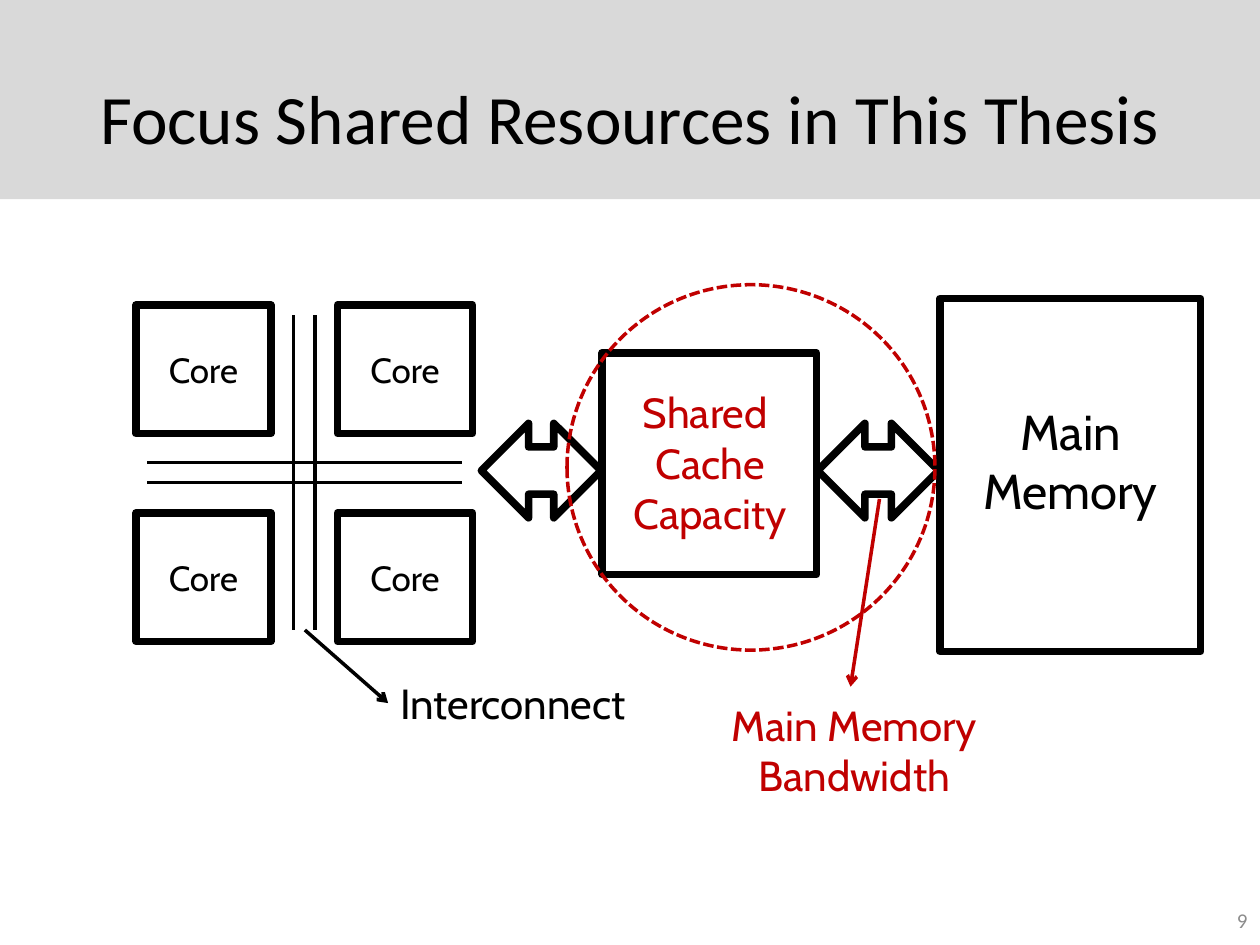
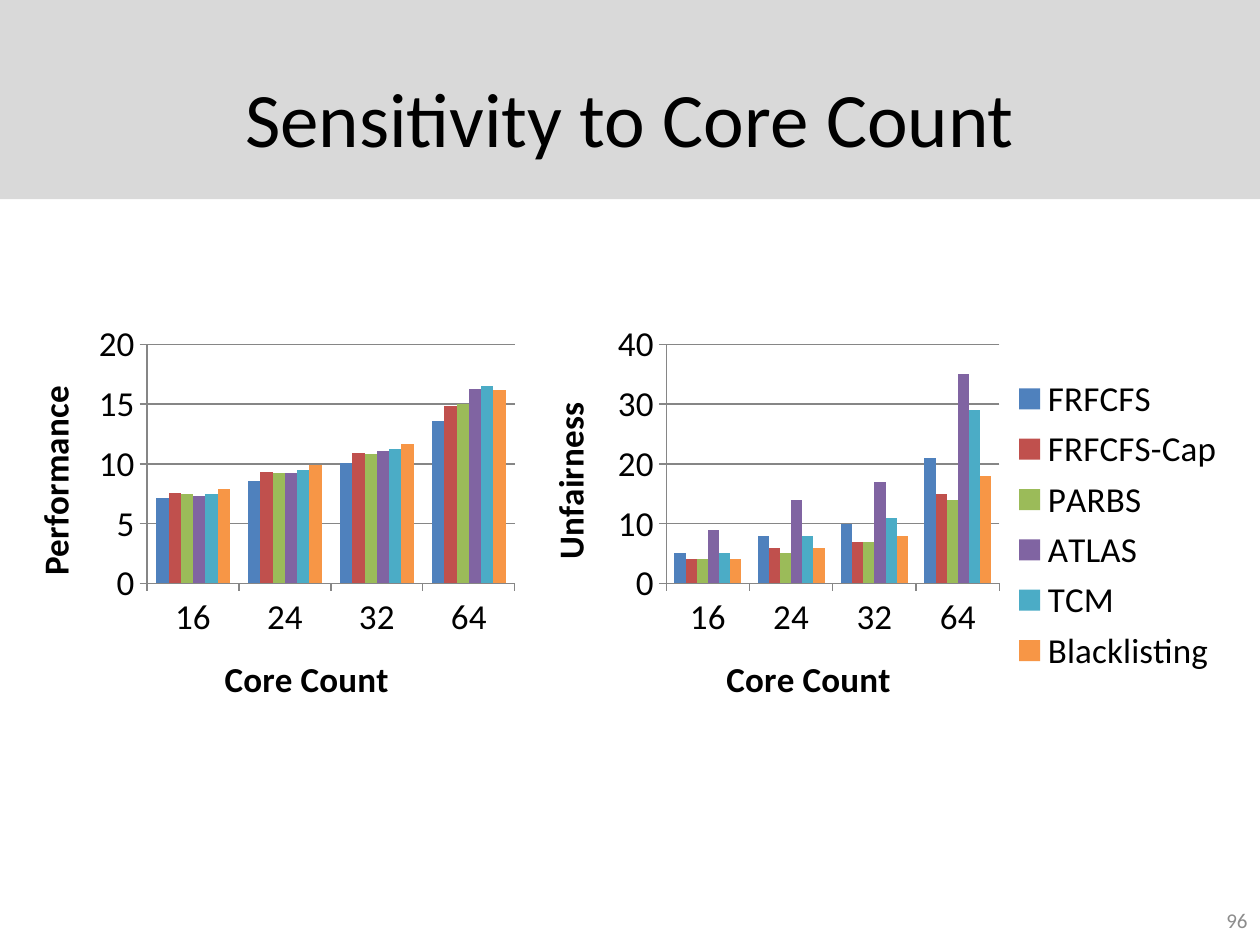
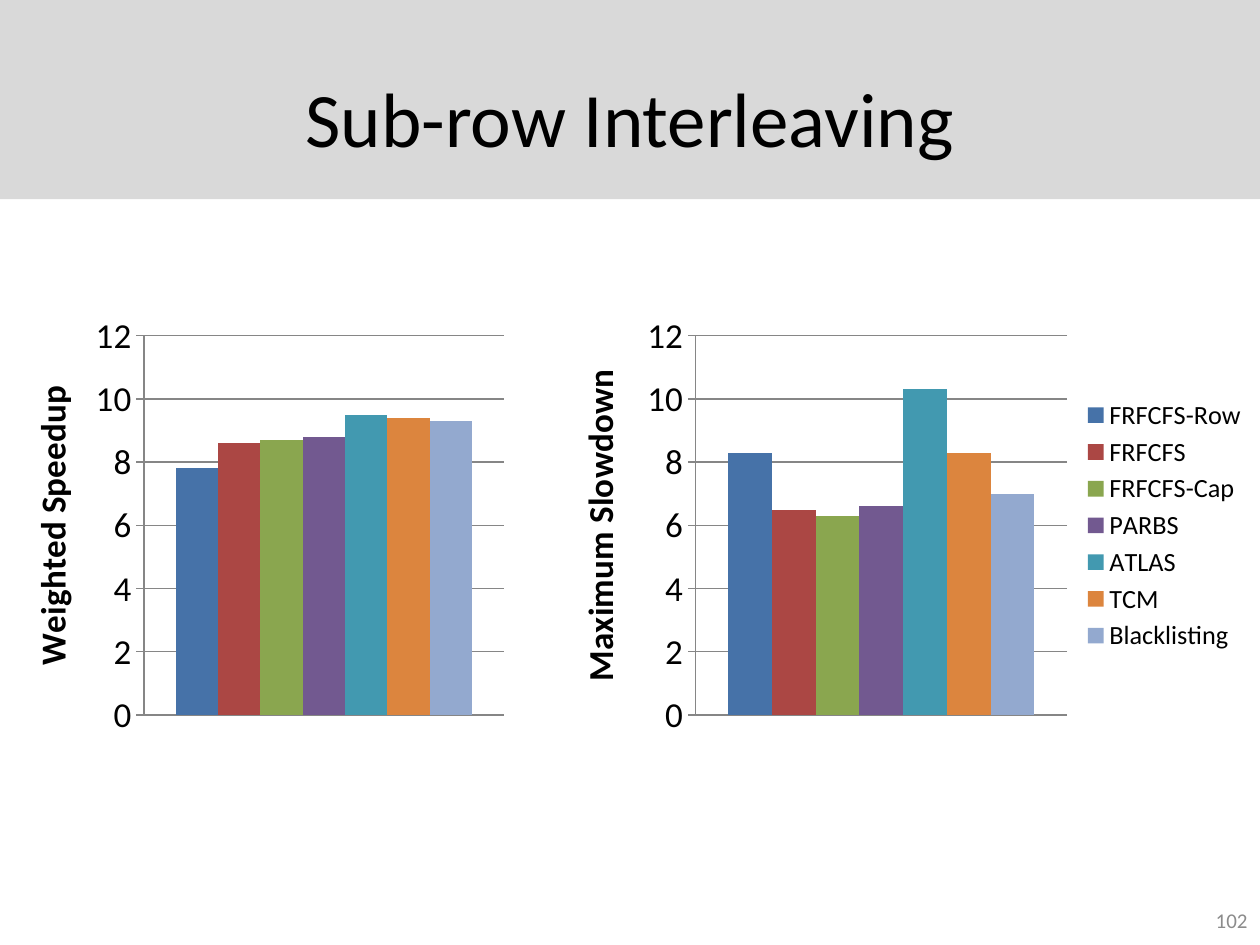
from lxml.etree import SubElement
from pptx import Presentation
from pptx.chart.data import CategoryChartData
from pptx.dml.color import RGBColor
from pptx.enum.chart import XL_CHART_TYPE as ChartType
from pptx.enum.chart import XL_LEGEND_POSITION as LegendPosition
from pptx.enum.chart import XL_TICK_MARK as TickMark
from pptx.enum.dml import MSO_LINE_DASH_STYLE as Dash
from pptx.enum.shapes import MSO_CONNECTOR as Connector
from pptx.enum.shapes import MSO_SHAPE as Shape
from pptx.enum.text import MSO_ANCHOR as Anchor
from pptx.enum.text import PP_ALIGN as Align
from pptx.oxml import parse_xml
from pptx.oxml.ns import nsdecls, qn
from pptx.util import Inches, Pt

BLACK, RED, BAND, NUMBER_GRAY, AXIS_GRAY = "000000", "C00000", "D9D9D9", "8C8C8C", "868686"
BODY_FONT, DIAGRAM_FONT = "Calibri", "Cabin"
THICK, THIN = 4.32, 2
SCHEDULER_COLORS = ["4F81BD", "C0504D", "9BBB59", "8064A2", "4BACC6", "F79646"]
INTERLEAVING_COLORS = ["4672A8", "AB4744", "8AA64F", "725990", "4299B0", "DC853E", "93A9CF"]
SCHEDULERS = ["FRFCFS", "FRFCFS-Cap", "PARBS", "ATLAS", "TCM", "Blacklisting"]
ROW_SCHEDULERS = ["FRFCFS-Row"] + SCHEDULERS
CORE_COUNTS = ["16", "24", "32", "64"]


def color(value):
    return RGBColor.from_string(value)


def style_font(font, size, hex_color=BLACK, name=BODY_FONT, bold=False):
    formats = {"size": Pt(size), "name": name, "bold": bold}
    for key, value in formats.items():
        setattr(font, key, value)
    font.color.rgb = color(hex_color)


def style_line(line, hex_color, width):
    line.color.rgb = color(hex_color)
    line.width = Pt(width)


def add_text(slide, place, text, size, hex_color=BLACK, name=BODY_FONT,
             align=Align.CENTER, anchor=Anchor.TOP):
    frame = slide.shapes.add_textbox(*map(Inches, place)).text_frame
    frame.word_wrap = True
    frame.vertical_anchor = anchor
    for index, line_text in enumerate(text.split("\n")):
        paragraph = frame.add_paragraph() if index else frame.paragraphs[0]
        paragraph.alignment = align
        run = paragraph.add_run()
        run.text = line_text
        style_font(run.font, size, hex_color, name)


def add_label(slide, place, text, size, hex_color=BLACK):
    add_text(slide, place, text, size, hex_color, DIAGRAM_FONT)


def add_outline(slide, kind, place, hex_color=BLACK, width=THICK):
    shape = slide.shapes.add_shape(kind, *map(Inches, place))
    shape.shadow.inherit = False
    shape.fill.background()
    style_line(shape.line, hex_color, width)
    SubElement(shape.line._get_or_add_ln(), qn("a:round"))
    return shape


def add_line(slide, start, end, hex_color=BLACK, arrow=False):
    connector = slide.shapes.add_connector(Connector.STRAIGHT, *map(Inches, start + end))
    style_line(connector.line, hex_color, THIN)
    if arrow:
        SubElement(connector.line._get_or_add_ln(), qn("a:tailEnd"), type="arrow")
    SubElement(connector._element.spPr, qn("a:effectLst"))


def add_slide(presentation, title, number, title_size=44):
    slide = presentation.slides.add_slide(presentation.slide_layouts[6])
    band = slide.shapes.add_shape(Shape.RECTANGLE, 0, 0, Inches(10), Inches(1.58))
    band.shadow.inherit = False
    band.fill.solid()
    band.fill.fore_color.rgb = color(BAND)
    band.line.fill.background()
    add_text(slide, (0.5, 0.3, 9, 1.25), title, title_size, anchor=Anchor.MIDDLE)
    add_text(slide, (7.67, 7.1, 2.33, 0.4), number, 12, NUMBER_GRAY,
             align=Align.RIGHT, anchor=Anchor.MIDDLE)
    return slide


def set_axis_title(axis, text):
    frame = axis.axis_title.text_frame
    frame.text = text
    style_font(frame.paragraphs[0].runs[0].font, 20, bold=True)
    return frame


def set_plot_layout(chart, layout):
    x, y, width, height = layout
    plot_area = chart._chartSpace.chart.plotArea
    for old_layout in plot_area.findall(qn("c:layout")):
        plot_area.remove(old_layout)
    plot_area.insert(0, parse_xml(
        f'<c:layout {nsdecls("c")}><c:manualLayout><c:layoutTarget val="inner"/>'
        f'<c:xMode val="edge"/><c:yMode val="edge"/><c:x val="{x}"/><c:y val="{y}"/>'
        f'<c:w val="{width}"/><c:h val="{height}"/></c:manualLayout></c:layout>'))


def add_column_chart(slide, place, layout, categories, series, colors, value_title,
                     maximum, step, category_title=None, legend_size=None):
    data = CategoryChartData()
    data.categories = categories
    for name, values in series.items():
        data.add_series(name, values)
    chart = slide.shapes.add_chart(ChartType.COLUMN_CLUSTERED, *map(Inches, place), data).chart
    chart.has_title = False
    style_font(chart.font, 20)
    set_plot_layout(chart, layout)

    plot = chart.plots[0]
    plot.vary_by_categories = False
    plot.gap_width = 150
    for bars, hex_color in zip(plot.series, colors):
        bars.format.fill.solid()
        bars.format.fill.fore_color.rgb = color(hex_color)

    value_axis, category_axis = chart.value_axis, chart.category_axis
    scale = {"minimum_scale": 0, "maximum_scale": maximum, "major_unit": step,
             "has_major_gridlines": True}
    for key, value in scale.items():
        setattr(value_axis, key, value)
    style_line(value_axis.major_gridlines.format.line, AXIS_GRAY, 0.75)
    for axis in (value_axis, category_axis):
        axis.major_tick_mark = TickMark.OUTSIDE
        style_line(axis.format.line, AXIS_GRAY, 0.75)
    set_axis_title(value_axis, value_title)._txBody.bodyPr.set("rot", "-5400000")
    if category_title:
        set_axis_title(category_axis, category_title)
    else:
        category_axis.visible = False

    chart.has_legend = legend_size is not None
    if legend_size:
        chart.legend.position = LegendPosition.RIGHT
        chart.legend.include_in_layout = False
        style_font(chart.legend.font, legend_size)


def add_core(slide, left, top):
    add_outline(slide, Shape.RECTANGLE, (left, top, 1.07, 1.02))
    add_label(slide, (left, top + 0.3, 1.07, 0.44), "Core", 20)


def build_shared_resources(presentation):
    slide = add_slide(presentation, "Focus Shared Resources in This Thesis", "9", 39.6)
    add_outline(slide, Shape.RECTANGLE, (7.46, 2.37, 2.07, 2.8))
    add_label(slide, (7.49, 3.14, 2.01, 1.04), "Main Memory", 28)
    add_outline(slide, Shape.LEFT_RIGHT_ARROW, (6.49, 3.36, 0.96, 0.75))
    add_outline(slide, Shape.RECTANGLE, (4.78, 2.8, 1.7, 1.76))
    add_label(slide, (4.81, 3.02, 1.65, 1.31), "Shared \nCache\nCapacity", 24, RED)
    add_outline(slide, Shape.LEFT_RIGHT_ARROW, (3.82, 3.36, 0.95, 0.75))
    for top in (2.42, 4.07):
        for left in (2.68, 1.08):
            add_core(slide, left, top)
    for x in (2.33, 2.5):
        add_line(slide, (x, 2.5), (x, 5))
    for y in (3.83, 3.67):
        add_line(slide, (1.17, y), (3.67, y))
    add_line(slide, (2.42, 5), (3.08, 5.58), arrow=True)
    add_label(slide, (2.83, 5.33, 2.48, 0.5), "Interconnect", 24)
    focus = add_outline(slide, Shape.OVAL, (4.5, 2.26, 2.92, 2.9), RED, THIN)
    focus.line.dash_style = Dash.SQUARE_DOT
    add_line(slide, (6.98, 3.96), (6.75, 5.45), RED, arrow=True)
    add_label(slide, (5.54, 5.5, 2.48, 0.91), "Main Memory Bandwidth", 24, RED)


def build_core_count(presentation):
    slide = add_slide(presentation, "Sensitivity to Core Count", "96")
    performance = [(7.1, 8.6, 10.1, 13.6), (7.6, 9.3, 10.9, 14.8), (7.5, 9.2, 10.8, 15),
                   (7.3, 9.2, 11.1, 16.3), (7.5, 9.5, 11.2, 16.5), (7.9, 9.9, 11.7, 16.2)]
    unfairness = [(5, 8, 10, 21), (4, 6, 7, 15), (4, 5, 7, 14),
                  (9, 14, 17, 35), (5, 8, 11, 29), (4, 6, 8, 18)]
    add_column_chart(slide, (0, 2.5, 4.17, 3.33), (0.28, 0.07, 0.7, 0.57), CORE_COUNTS,
                     dict(zip(SCHEDULERS, performance)), SCHEDULER_COLORS,
                     "Performance", 20, 5, "Core Count")
    add_column_chart(slide, (4.08, 2.5, 5.75, 3.33), (0.21, 0.07, 0.46, 0.57), CORE_COUNTS,
                     dict(zip(SCHEDULERS, unfairness)), SCHEDULER_COLORS,
                     "Unfairness", 40, 10, "Core Count", legend_size=20)


def build_interleaving(presentation):
    slide = add_slide(presentation, "Sub-row Interleaving", "102")
    slowdown = [8.3, 6.5, 6.3, 6.6, 10.3, 8.3, 7]
    speedup = [7.8, 8.6, 8.7, 8.8, 9.5, 9.4, 9.3]
    charts = [
        ((4.33, 2.42, 5.67, 3.5), (0.21, 0.07, 0.52, 0.86), slowdown, "Maximum Slowdown", 15),
        ((0, 2.42, 4.08, 3.5), (0.28, 0.07, 0.7, 0.86), speedup, "Weighted Speedup", None),
    ]
    for place, layout, values, title, legend_size in charts:
        series = {name: [value] for name, value in zip(ROW_SCHEDULERS, values)}
        add_column_chart(slide, place, layout, ["1"], series, INTERLEAVING_COLORS,
                         title, 12, 2, legend_size=legend_size)


def main():
    presentation = Presentation()
    presentation.slide_width = Inches(10)
    presentation.slide_height = Inches(7.5)
    build_shared_resources(presentation)
    build_core_count(presentation)
    build_interleaving(presentation)
    presentation.save("out.pptx")


if __name__ == "__main__":
    main()
